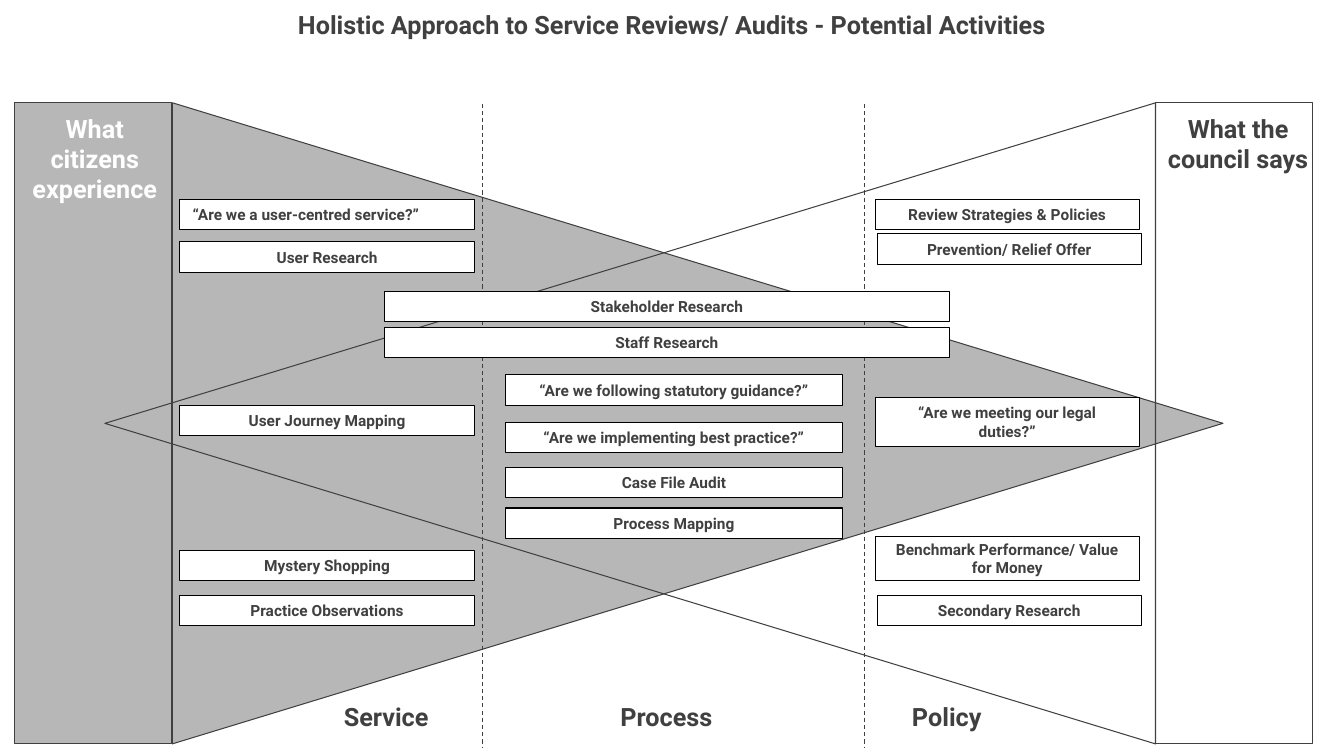
from lxml import etree
from pptx import Presentation
from pptx.dml.color import RGBColor
from pptx.enum.dml import MSO_LINE
from pptx.enum.shapes import MSO_CONNECTOR, MSO_SHAPE
from pptx.enum.text import MSO_ANCHOR as ANCHOR, MSO_AUTO_SIZE, PP_ALIGN as ALIGN
from pptx.oxml.ns import qn
from pptx.util import Inches, Pt

COLOURS = {"ink": "404041", "grey": "B7B7B7", "white": "FFFFFF", "black": "000000"}


class ReviewSlide:
    """Hold the diagram style and draw its elements on one slide."""

    font = "Roboto"
    inset = Inches(0.13)
    line_width = Pt(0.75)

    def __init__(self, deck):
        self.slide = deck.slides.add_slide(deck.slide_layouts[5])

    def colour(self, name):
        return RGBColor.from_string(COLOURS[name])

    def set_label(self, holder, text, size, colour="ink", align=ALIGN.CENTER, anchor=ANCHOR.TOP):
        frame = holder.text_frame
        frame.text = text
        frame.word_wrap = True
        frame.auto_size = MSO_AUTO_SIZE.NONE
        frame.vertical_anchor = anchor
        frame.margin_left = frame.margin_right = self.inset
        frame.margin_top = frame.margin_bottom = self.inset
        paragraph = frame.paragraphs[0]
        paragraph.alignment = align
        font = paragraph.runs[0].font
        font.name, font.size, font.bold = self.font, Pt(size), True
        font.color.rgb = self.colour(colour)

    def title(self, text, left, top, width, height):
        heading = self.slide.shapes.title
        heading.left, heading.top = Inches(left), Inches(top)
        heading.width, heading.height = Inches(width), Inches(height)
        self.set_label(heading, text, 18)

    def heading(self, text, left, top, height, colour="ink"):
        label = self.slide.shapes.add_textbox(
            Inches(left), Inches(top), Inches(1.72), Inches(height))
        self.set_label(label, text, 18, colour)

    def outline(self, kind, left, top, width, height, fill=None, line="ink", rotation=0):
        shape = self.slide.shapes.add_shape(
            kind, Inches(left), Inches(top), Inches(width), Inches(height))
        shape.shadow.inherit = False
        shape.rotation = rotation
        if fill:
            shape.fill.solid()
            shape.fill.fore_color.rgb = self.colour(fill)
        else:
            shape.fill.background()
        shape.line.color.rgb = self.colour(line)
        shape.line.width = self.line_width
        return shape

    def view(self, panel_left, cone_left, rotation, fill=None):
        self.outline(MSO_SHAPE.ISOSCELES_TRIANGLE, cone_left, -1.01, 6.36, 10.42,
                     fill, rotation=rotation)
        self.outline(MSO_SHAPE.RECTANGLE, panel_left, 1.02, 1.56, 6.36, fill)

    def divider(self, x):
        divider = self.slide.shapes.add_connector(
            MSO_CONNECTOR.STRAIGHT, Inches(x), Inches(1.03), Inches(x), Inches(7.41))
        divider.line.color.rgb = self.colour("ink")
        divider.line.width = self.line_width
        divider.line.dash_style = MSO_LINE.DASH
        etree.SubElement(divider._element.spPr, qn("a:effectLst"))

    def activity(self, text, left, top, width, height=0.3, align=ALIGN.CENTER):
        box = self.outline(MSO_SHAPE.RECTANGLE, left, top, width, height, "white", "black")
        self.set_label(box, text, 11, align=align, anchor=ANCHOR.MIDDLE)


def main():
    deck = Presentation()
    deck.slide_width, deck.slide_height = Inches(13.33), Inches(7.5)
    review = ReviewSlide(deck)

    review.title("Holistic Approach to Service Reviews/ Audits - Potential Activities",
                 0, -0.04, 13.33, 0.53)
    review.view(0.14, 3.74, 90, "grey")
    review.view(11.46, 3.07, 270)
    for x in (4.79, 8.57):
        review.divider(x)

    review.heading("What citizens experience", 0.08, 0.99, 1.41, "white")
    review.heading("What the council says", 11.42, 0.99, 1.41)
    for index, stage in enumerate(("Service", "Process", "Policy")):
        review.heading(stage, 2.97 + 2.78 * index, 6.83, 0.53)

    review.activity("“Are we a user-centred service?”", 1.78, 1.98, 2.93, align=ALIGN.LEFT)
    columns = {
        (1.78, 2.93): [("User Research", 2.4), ("User Journey Mapping", 4.02),
                       ("Mystery Shopping", 5.46), ("Practice Observations", 5.91)],
        (3.81, 5.61): [("Stakeholder Research", 2.89), ("Staff Research", 3.25)],
        (5.01, 3.35): [("“Are we following statutory guidance?”", 3.72),
                       ("“Are we implementing best practice?”", 4.19),
                       ("Case File Audit", 4.64), ("Process Mapping", 5.04)],
        (8.68, 2.62): [("Review Strategies & Policies", 1.98),
                       ("“Are we meeting our legal duties?”", 3.94, 0.49),
                       ("Benchmark Performance/ Value for Money", 5.32, 0.44)],
        (8.7, 2.62): [("Prevention/ Relief Offer", 2.32), ("Secondary Research", 5.91)],
    }
    for (left, width), activities in columns.items():
        for text, top, *height in activities:
            review.activity(text, left, top, width, *height)

    deck.save("out.pptx")


if __name__ == "__main__":
    main()
